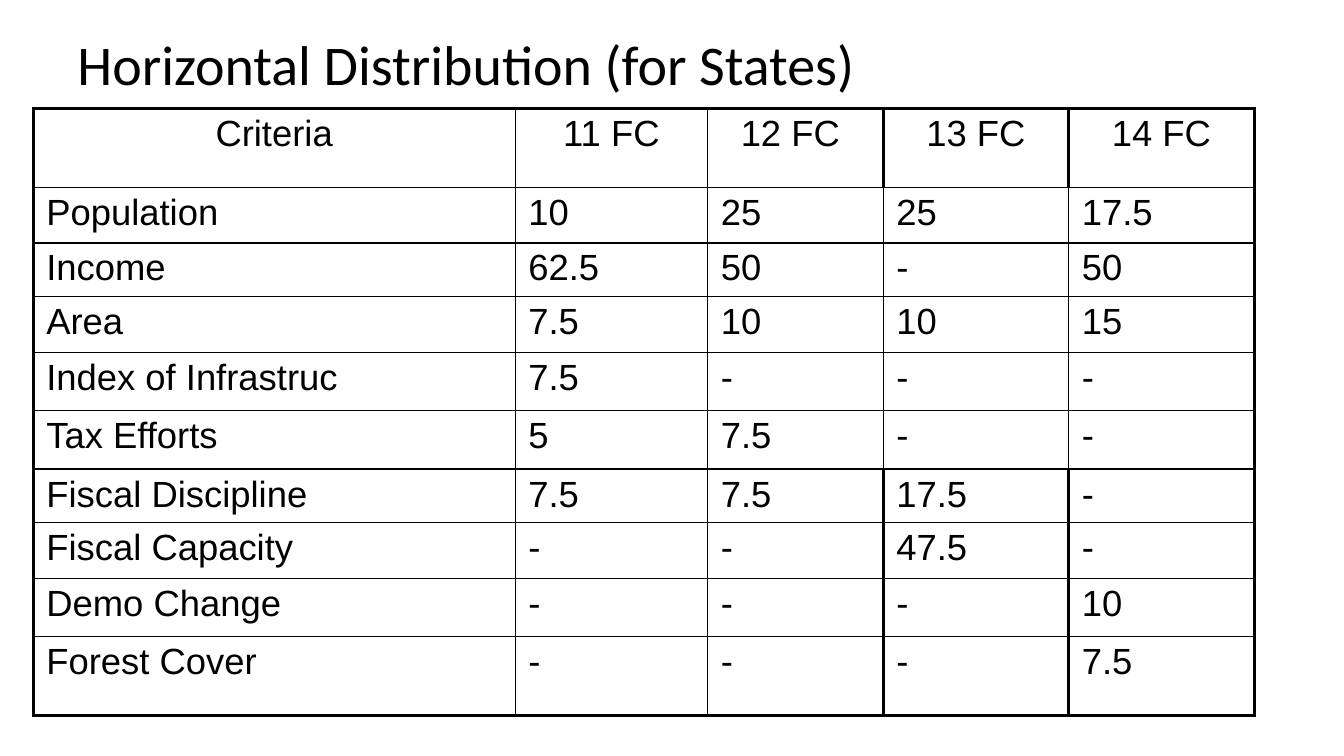
from lxml.etree import SubElement
from pptx import Presentation
from pptx.dml.color import RGBColor
from pptx.enum.text import MSO_ANCHOR, PP_ALIGN
from pptx.oxml.ns import qn
from pptx.util import Inches, Pt

BLACK = "000000"
THIN, THICK = 1, 2.25
CELL_FORMAT = {
    "margin_left": Inches(0.13),
    "margin_right": Inches(0.13),
    "margin_top": Inches(0.05),
    "margin_bottom": Inches(0.05),
    "vertical_anchor": MSO_ANCHOR.TOP,
}


def write(paragraph, text, font_name, size, color=BLACK):
    run = paragraph.add_run()
    run.text = text
    for name, value in {"name": font_name, "size": Pt(size), "bold": False}.items():
        setattr(run.font, name, value)
    run.font.color.rgb = RGBColor.from_string(color)


def add_border(cell, side, width, color=BLACK):
    line = SubElement(cell._tc.get_or_add_tcPr(), qn(f"a:ln{side}"), w=str(Pt(width)))
    fill = SubElement(line, qn("a:solidFill"))
    SubElement(fill, qn("a:srgbClr"), val=color)


presentation = Presentation()
presentation.slide_width = Inches(13.33)
presentation.slide_height = Inches(7.5)
slide = presentation.slides.add_slide(presentation.slide_layouts[6])

# Title
title = slide.shapes.add_textbox(Inches(0.67), Inches(0), Inches(11.67), Inches(1.33))
title.text_frame.word_wrap = True
title.text_frame.vertical_anchor = MSO_ANCHOR.MIDDLE
title_paragraph = title.text_frame.paragraphs[0]
title_paragraph.line_spacing = 0.9
write(title_paragraph, "Horizontal Distribution (for States)", "Calibri", 40)

# Criteria weights per Finance Commission
rows = [
    ("Criteria", "11 FC", "12 FC ", "13 FC", "14 FC"),
    ("Population", "10", "25", "25", "17.5"),
    ("Income", "62.5", "50", "-", "50"),
    ("Area", "7.5", "10", "10", "15"),
    ("Index of Infrastruc", "7.5", "-", "-", "-"),
    ("Tax Efforts", "5", "7.5", "-", "-"),
    ("Fiscal Discipline", "7.5", "7.5", "17.5", "-"),
    ("Fiscal Capacity", "-", "-", "47.5", "-"),
    ("Demo Change", "-", "-", "-", "10"),
    ("Forest Cover", "-", "-", "-", "7.5"),
]
column_widths = [4.78, 1.91, 1.74, 1.84, 1.84]
row_heights = [0.78, 0.55, 0.5, 0.55, 0.58, 0.58, 0.5, 0.55, 0.58, 0.78]

# Table grid
table = slide.shapes.add_table(
    len(rows), len(column_widths), Inches(0.33), Inches(1.08),
    Inches(sum(column_widths)), Inches(sum(row_heights)),
).table
table.first_row = False
table.horz_banding = False
for column, width in zip(table.columns, column_widths):
    column.width = Inches(width)
for row, height in zip(table.rows, row_heights):
    row.height = Inches(height)

# Cells: the outer frame is thick, and so are both sides of 13 FC
# in the header and from Fiscal Discipline down
for row_index, values in enumerate(rows):
    thick_verticals = {0, len(column_widths)}
    if row_index == 0 or row_index >= 6:
        thick_verticals |= {3, 4}
    for column_index, value in enumerate(values):
        cell = table.cell(row_index, column_index)
        for name, setting in CELL_FORMAT.items():
            setattr(cell, name, setting)
        thick_sides = {
            "L": column_index in thick_verticals,
            "R": column_index + 1 in thick_verticals,
            "T": row_index == 0,
            "B": row_index == len(rows) - 1,
        }
        for side, is_thick in thick_sides.items():
            add_border(cell, side, THICK if is_thick else THIN)
        cell.fill.background()
        paragraph = cell.text_frame.paragraphs[0]
        paragraph.alignment = PP_ALIGN.CENTER if row_index == 0 else PP_ALIGN.LEFT
        write(paragraph, value, "Arial", 26)

presentation.save("out.pptx")
